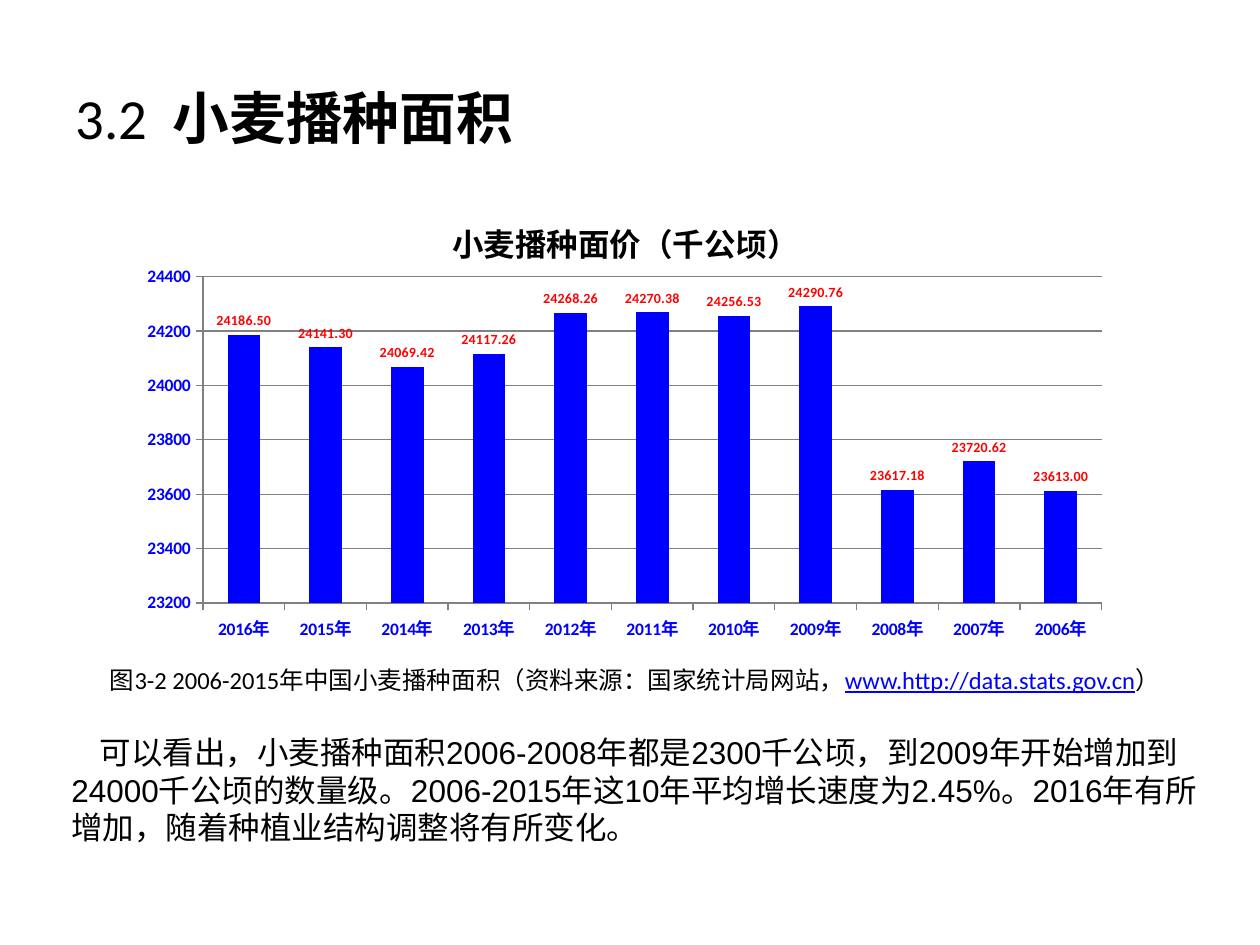
from dataclasses import dataclass

from lxml.etree import SubElement
from pptx import Presentation
from pptx.chart.data import CategoryChartData
from pptx.dml.color import RGBColor
from pptx.enum.chart import XL_CHART_TYPE, XL_LABEL_POSITION, XL_TICK_MARK
from pptx.enum.text import MSO_ANCHOR, PP_ALIGN
from pptx.oxml.ns import qn
from pptx.util import Cm, Pt

COLORS = {"text": "000000", "blue": "0000FF", "label": "FF0000", "line": "808080"}
CHART_TITLE = "小麦播种面价（千公顷）"
AREAS = [24186.5, 24141.3, 24069.42, 24117.26, 24268.26, 24270.38,
         24256.53, 24290.76, 23617.18, 23720.62, 23613]
YEARS = [f"{2016 - i}年" for i in range(len(AREAS))]


@dataclass
class Box:
    """Position and size in centimetres."""
    left: float
    top: float
    width: float
    height: float

    def lengths(self) -> tuple:
        return Cm(self.left), Cm(self.top), Cm(self.width), Cm(self.height)


def rgb(name: str) -> RGBColor:
    return RGBColor.from_string(COLORS[name])


def style(font, size: float, color: str = "text", bold: bool = False,
          name: str = "Calibri") -> None:
    font.name, font.size, font.bold = name, Pt(size), bold
    font.color.rgb = rgb(color)


def add_text(s, box: Box, anchor: MSO_ANCHOR):
    tf = s.shapes.add_textbox(*box.lengths()).text_frame
    tf.word_wrap = True
    tf.vertical_anchor = anchor
    return tf


def add_runs(p, *texts: str) -> list:
    runs = []
    for text in texts:
        r = p.add_run()
        r.text = text
        runs.append(r)
    return runs


def place(element, inner: bool = False, **fractions: float) -> None:
    """Place a chart part by fractions of the chart's size."""
    layout = element.find(qn("c:layout"))
    if layout is None:
        layout = SubElement(element, qn("c:layout"))
        text = element.find(qn("c:tx"))
        if text is not None:
            text.addnext(layout)
        else:
            element.insert(0, layout)
    manual = SubElement(layout, qn("c:manualLayout"))
    if inner:
        SubElement(manual, qn("c:layoutTarget")).set("val", "inner")
    for mode in ("xMode", "yMode"):
        SubElement(manual, qn(f"c:{mode}")).set("val", "edge")
    for key, value in fractions.items():
        SubElement(manual, qn(f"c:{key}")).set("val", str(value))


def style_line(line) -> None:
    line.color.rgb = rgb("line")
    line.width = Pt(0.75)


def style_axis(axis) -> None:
    style(axis.tick_labels.font, 10, "blue", True)
    axis.major_tick_mark = XL_TICK_MARK.OUTSIDE
    axis.minor_tick_mark = XL_TICK_MARK.NONE
    style_line(axis.format.line)


def add_area_chart(s, box: Box) -> None:
    data = CategoryChartData()
    data.categories = YEARS
    data.add_series(CHART_TITLE, AREAS)
    chart = s.shapes.add_chart(XL_CHART_TYPE.COLUMN_CLUSTERED, *box.lengths(), data).chart
    style(chart.font, 10)
    chart.has_legend = False

    p = chart.chart_title.text_frame.paragraphs[0]
    add_runs(p, CHART_TITLE)
    style(p.font, 18, bold=True)
    chart.chart_title.include_in_layout = False
    title = chart.chart_title.text_frame._txBody.getparent().getparent()
    place(title, x=0.32, y=0.07)
    place(title.getparent().find(qn("c:plotArea")), True, x=0.075, y=0.21, w=0.904, h=0.69)

    style_axis(chart.category_axis)
    axis = chart.value_axis
    style_axis(axis)
    axis.minimum_scale, axis.maximum_scale, axis.major_unit = 23200, 24400, 200
    axis.tick_labels.number_format = "0"
    axis.tick_labels.number_format_is_linked = False
    style_line(axis.major_gridlines.format.line)

    plot = chart.plots[0]
    plot.vary_by_categories = False
    plot.gap_width = 150
    series = plot.series[0]
    series.format.fill.solid()
    series.format.fill.fore_color.rgb = rgb("blue")
    labels = series.data_labels
    labels.show_value = True
    labels.position = XL_LABEL_POSITION.OUTSIDE_END
    labels.number_format = "0.00"
    labels.number_format_is_linked = False
    style(labels.font, 8, "label", True)


def add_title(s, box: Box) -> None:
    p = add_text(s, box, MSO_ANCHOR.MIDDLE).paragraphs[0]
    style(p.font, 32.4)
    number, heading = add_runs(p, "3.2  ", "小麦播种面积")
    heading.font.bold = True


def add_notes_below_chart(s, box: Box) -> None:
    tf = add_text(s, box, MSO_ANCHOR.TOP)
    caption = tf.paragraphs[0]
    caption.alignment = PP_ALIGN.CENTER
    style(caption.font, 14)
    source, address, close = add_runs(
        caption, "图3-2 2006-2015年中国小麦播种面积（资料来源：国家统计局网站，",
        "www.http://data.stats.gov.cn", "）")
    address.font.underline = True
    address.font.color.rgb = rgb("blue")

    body = tf.add_paragraph()
    body.space_before = Pt(22)
    body._p.get_or_add_pPr().set("indent", str(Cm(0.57)))
    style(body.font, 18, name="Arial")
    add_runs(body, "可以看出，小麦播种面积2006-2008年都是2300千公顷，到2009年开始增加到"
                   "24000千公顷的数量级。2006-2015年这10年平均增长速度为2.45%。"
                   "2016年有所增加，随着种植业结构调整将有所变化。")


def main() -> None:
    prs = Presentation()
    prs.slide_width, prs.slide_height = Cm(25.4), Cm(19.05)
    s = prs.slides.add_slide(prs.slide_layouts[6])
    add_title(s, Box(1.27, 0.76, 22.86, 3.18))
    add_area_chart(s, Box(2.59, 3.58, 20.04, 9.53))
    add_notes_below_chart(s, Box(1.19, 13.28, 23.22, 4.67))
    prs.save("out.pptx")


if __name__ == "__main__":
    main()
